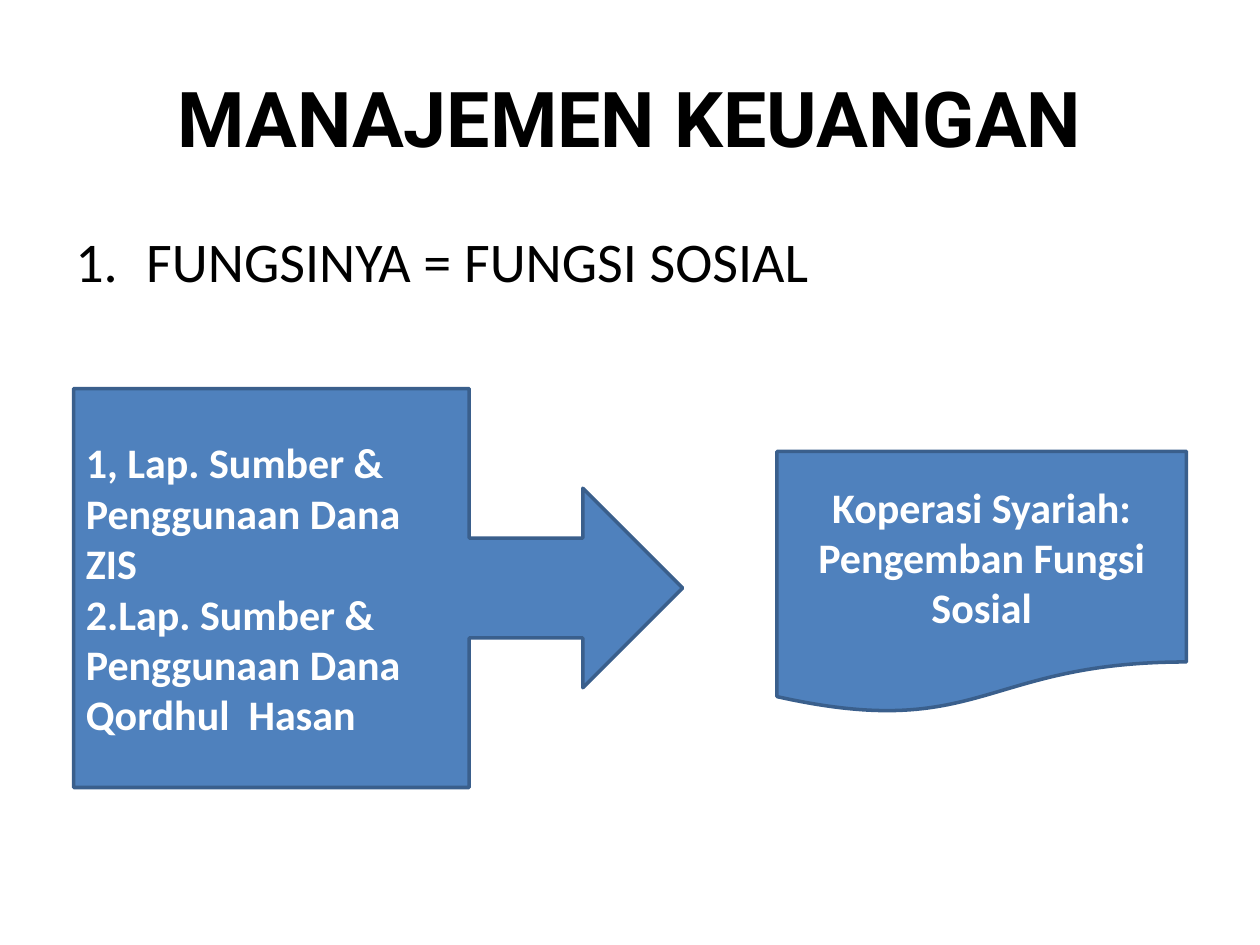
from lxml import etree
from pptx import Presentation
from pptx.dml.color import RGBColor
from pptx.enum.shapes import MSO_SHAPE
from pptx.enum.text import MSO_ANCHOR, PP_ALIGN
from pptx.oxml.ns import qn
from pptx.util import Pt

LEFT, CENTER = PP_ALIGN.LEFT, PP_ALIGN.CENTER
TOP, MIDDLE = MSO_ANCHOR.TOP, MSO_ANCHOR.MIDDLE
CALLOUT = MSO_SHAPE.RIGHT_ARROW_CALLOUT
DOCUMENT = MSO_SHAPE.FLOWCHART_DOCUMENT


def color(code):
    return RGBColor.from_string(code)


def write(shape, lines, size, face, tint, bold, align, anchor):
    frame = shape.text_frame
    frame.word_wrap = True
    frame.vertical_anchor = anchor
    frame.text = "\n".join(lines)
    for para in frame.paragraphs:
        para.alignment = align
        font = para.font
        font.size = Pt(size)
        font.name = face
        font.bold = bold
        font.color.rgb = color(tint)


deck = Presentation()
deck.slide_width, deck.slide_height = Pt(720), Pt(540)
slide = deck.slides.add_slide(deck.slide_layouts[6])
shapes = slide.shapes

title = shapes.add_textbox(Pt(36), Pt(21.6), Pt(648), Pt(90))
write(title, ["MANAJEMEN KEUANGAN"], 44, "Roboto", "000000", True, CENTER, MIDDLE)

body = shapes.add_textbox(Pt(36), Pt(126), Pt(648), Pt(356.4))
write(body, ["FUNGSINYA = FUNGSI SOSIAL"], 32, "Calibri", "000000", False, LEFT, TOP)
item = body.text_frame.paragraphs[0]
item.space_before = Pt(6.4)
props = item._p.get_or_add_pPr()
props.set("marL", str(Pt(40.5)))
props.set("indent", str(-Pt(40.5)))
number = etree.Element(qn("a:buAutoNum"), type="arabicPeriod")
props.find(qn("a:defRPr")).addprevious(number)

reports = [
    "1, Lap. Sumber & Penggunaan Dana ZIS",
    "2.Lap. Sumber & Penggunaan Dana Qordhul  Hasan",
]
goal = ["Koperasi Syariah: Pengemban Fungsi Sosial"]
boxes = [
    (CALLOUT, 42, 222, 348, 228, reports, LEFT),
    (DOCUMENT, 444, 258, 234, 150, goal, CENTER),
]
for kind, left, top, width, height, lines, align in boxes:
    box = shapes.add_shape(kind, Pt(left), Pt(top), Pt(width), Pt(height))
    box.shadow.inherit = False
    box.fill.solid()
    box.fill.fore_color.rgb = color("4F81BD")
    box.line.color.rgb = color("3A5F8C")
    box.line.width = Pt(2)
    write(box, lines, 24, "Calibri", "FFFFFF", True, align, MIDDLE)

deck.save("out.pptx")
